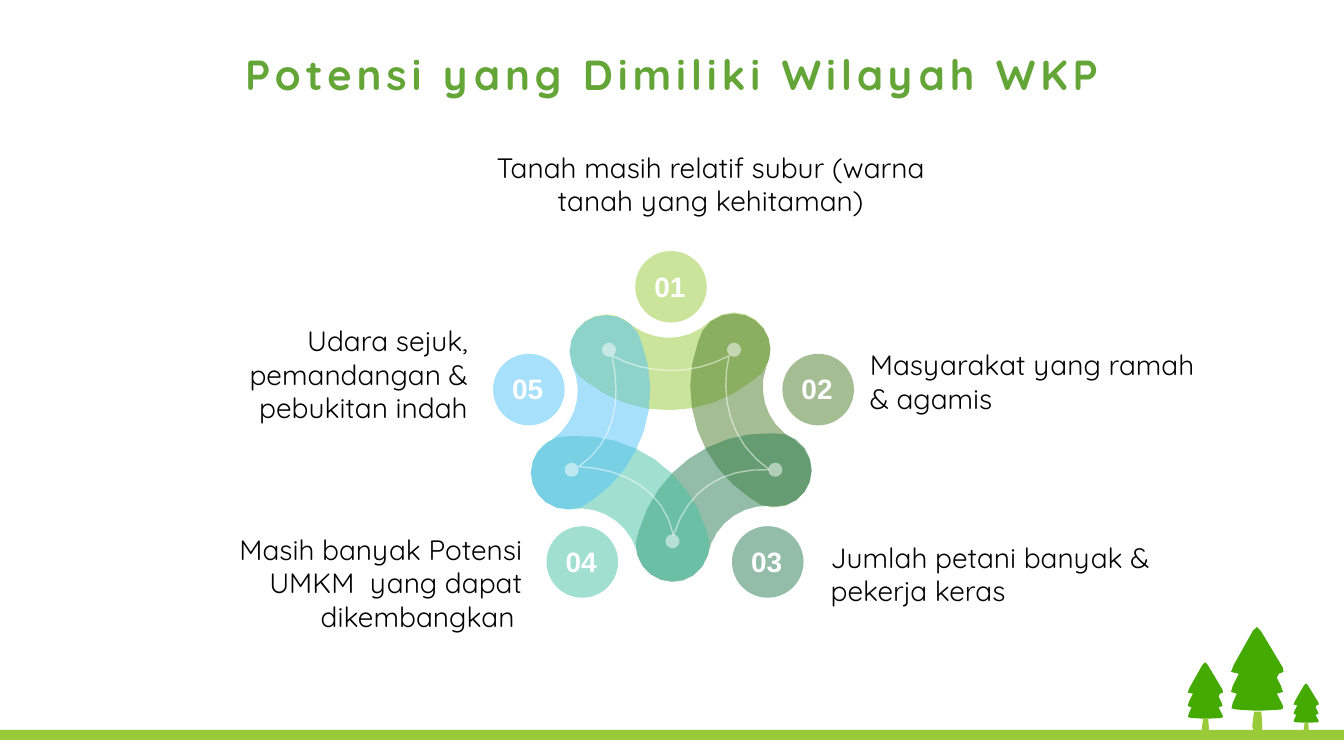
import math

from lxml import etree
from pptx import Presentation
from pptx.dml.color import RGBColor
from pptx.enum.shapes import MSO_SHAPE
from pptx.enum.text import MSO_ANCHOR, MSO_AUTO_SIZE, PP_ALIGN
from pptx.oxml.ns import qn
from pptx.util import Inches, Pt

LEFT, CENTER, RIGHT = PP_ALIGN.LEFT, PP_ALIGN.CENTER, PP_ALIGN.RIGHT
TOP, MIDDLE = MSO_ANCHOR.TOP, MSO_ANCHOR.MIDDLE
GROW, FIXED = MSO_AUTO_SIZE.SHAPE_TO_FIT_TEXT, MSO_AUTO_SIZE.NONE
RECTANGLE, OVAL = MSO_SHAPE.RECTANGLE, MSO_SHAPE.OVAL
DOT = MSO_SHAPE.FLOWCHART_CONNECTOR

COLORS = {
    "title": "63A537", "text": "000000", "white": "FFFFFF",
    "lime": "99CB38", "olive": "4A7C29", "forest": "297D53",
    "teal": "44C1A3", "sky": "51C3F9", "leaf": "44A900",
}
STEPS_PER_INCH, MOST_STEPS = 8, 8
BADGE_SIZE, DOT_SIZE = 0.71, 0.14
LINK_SIZE = (1.99, 0.97)

# Outlines: a start point, then curves (two controls and an end) or line ends
LINK_PATH = [
    (7.28, 3.1), (7.48, 3.1, 7.64, 3.27, 7.64, 3.47),
    (7.64, 3.6, 7.57, 3.72, 7.46, 3.78), (6.99, 4.16, 6.31, 4.17, 5.83, 3.8),
    (5.72, 3.74, 5.65, 3.62, 5.65, 3.49), (5.65, 3.29, 5.81, 3.12, 6.01, 3.12),
    (6.11, 3.12, 6.2, 3.16, 6.27, 3.23), (6.51, 3.41, 6.84, 3.39, 7.05, 3.18),
    (7.12, 3.13, 7.19, 3.1, 7.28, 3.1),
]
STAR_PATH = [
    (6.07, 3.53), (6.43, 3.72, 6.86, 3.73, 7.23, 3.53),
    (7.14, 3.94, 7.23, 4.38, 7.63, 4.66), (7.16, 4.64, 6.82, 4.86, 6.68, 5.31),
    (6.58, 4.85, 6.18, 4.65, 5.74, 4.63), (6.09, 4.39, 6.17, 3.98, 6.07, 3.53),
]
CROWN_PATH = [
    (12.44, 7.06), (12.27, 7.05), (12.21, 7.05, 12.2, 7.04, 12.23, 6.98),
    (12.27, 6.89), (12.2, 6.88, 12.2, 6.88, 12.23, 6.81), (12.29, 6.69),
    (12.2, 6.68, 12.19, 6.68, 12.24, 6.6), (12.43, 6.26),
    (12.47, 6.22), (12.51, 6.26), (12.73, 6.63),
    (12.75, 6.67, 12.74, 6.68, 12.69, 6.69), (12.67, 6.73), (12.71, 6.81),
    (12.75, 6.88, 12.74, 6.88, 12.67, 6.89), (12.73, 7.01),
    (12.74, 7.03, 12.74, 7.04, 12.71, 7.05), (12.52, 7.06),
]
TRUNK_PATH = [
    (12.44, 7.06), (12.52, 7.06), (12.53, 7.21),
    (12.54, 7.25, 12.52, 7.27, 12.48, 7.28), (12.44, 7.28, 12.42, 7.25, 12.42, 7.21),
]

# Content: left, top and what belongs there
LINKS = [(5.65, 3.1, 0, "lime"), (6.38, 3.62, 72.2, "olive"),
         (6.12, 4.46, 144.6, "forest"), (5.22, 4.47, 215.3, "teal"),
         (4.93, 3.64, 288.6, "sky")]
BADGES = [(6.3, 2.49, "lime"), (7.76, 3.51, "olive"), (7.26, 5.22, "forest"),
          (5.42, 5.22, "teal"), (4.89, 3.51, "sky")]
DOTS = [(5.97, 3.4), (7.21, 3.4), (7.62, 4.59), (6.6, 5.3), (5.6, 4.59)]
LABELS = [
    ((4.61, 1.44, 4.9, 0.77), CENTER,
     ["Tanah masih relatif subur (warna tanah yang kehitaman)"]),
    ((8.53, 3.4, 4.47, 0.77), LEFT, ["Masyarakat yang ramah", "& agamis"]),
    ((8.14, 5.31, 3.85, 0.77), LEFT, ["Jumlah petani banyak & pekerja keras"]),
    ((1.66, 5.23, 3.64, 1.11), RIGHT,
     ["Masih banyak Potensi UMKM  yang dapat dikembangkan "]),
    ((1.12, 3.16, 3.64, 1.11), RIGHT,
     ["Udara sejuk, pemandangan & pebukitan indah"]),
]
TREES = [  # crown box, trunk box
    ((12.21, 6.22, 0.52, 0.83), (12.42, 7.06, 0.1, 0.21)),
    ((12.83, 6.78, 0.25, 0.39), (12.93, 7.17, 0.05, 0.1)),
    ((11.78, 6.57, 0.35, 0.56), (11.92, 7.13, 0.07, 0.14)),
]


def rgb(name):
    return RGBColor.from_string(COLORS[name])


def set_all(target, values):
    for name, value in values.items():
        setattr(target, name, value)


def paint(shape, fill=None, line=None, opacity=100):
    shape.shadow.inherit = False
    if fill:
        shape.fill.solid()
        shape.fill.fore_color.rgb = rgb(fill)
    else:
        shape.fill.background()
    if line:
        shape.line.color.rgb = rgb(line)
        shape.line.width = Pt(1)
    else:
        shape.line.fill.background()
    if opacity < 100:
        for color in list(shape._element.spPr.iter(qn("a:srgbClr"))):
            etree.SubElement(color, qn("a:alpha")).set("val", str(opacity * 1000))


def add_preset(holder, kind, at, fill, opacity=100):
    shape = holder.shapes.add_shape(kind, *map(Inches, at))
    paint(shape, fill, opacity=opacity)


def trace(outline):
    """Return points along an outline, more of them on longer curves."""
    points = [outline[0]]
    for step in outline[1:]:
        if len(step) == 2:
            points.append(step)
            continue
        corners = [points[-1], step[:2], step[2:4], step[4:]]
        chord = math.dist(corners[0], corners[3])
        count = min(MOST_STEPS, max(2, math.ceil(chord * STEPS_PER_INCH)))
        for index in range(1, count + 1):
            t = index / count
            weights = ((1 - t) ** 3, 3 * t * (1 - t) ** 2, 3 * t * t * (1 - t), t ** 3)
            points.append(tuple(sum(w * c[axis] for w, c in zip(weights, corners))
                                for axis in (0, 1)))
    return [(Inches(x), Inches(y)) for x, y in points]


def add_outline(page, outline, at, rotation=0, **look):
    points = trace(outline)
    builder = page.shapes.build_freeform(*points[0])
    builder.add_line_segments(points[1:], close=True)
    shape = builder.convert_to_shape()
    set_all(shape, dict(zip(("left", "top", "width", "height"), map(Inches, at))))
    shape.rotation = rotation
    paint(shape, **look)


def add_text(holder, at, lines, align=CENTER, font="Quicksand", size=20,
             color="text", bold=False, frame=None, para_format=None, spacing=None):
    box = holder.shapes.add_textbox(*map(Inches, at))
    set_all(box.text_frame, {
        "word_wrap": True, "auto_size": GROW, "vertical_anchor": TOP,
        "margin_left": Inches(0.1), "margin_right": Inches(0.12),
        "margin_top": Inches(0.05), "margin_bottom": Inches(0.05), **(frame or {})})
    for index, line in enumerate(lines):
        para = box.text_frame.add_paragraph() if index else box.text_frame.paragraphs[0]
        set_all(para, {"alignment": align, **(para_format or {})})
        span = para.add_run()
        span.text = line
        set_all(span.font, {"name": font, "size": Pt(size), "bold": bold})
        span.font.color.rgb = rgb(color)
        if spacing:
            span.font._element.set("spc", str(int(spacing * 100)))


def add_badge(page, number, left, top, color):
    badge = page.shapes.add_group_shape()
    add_preset(badge, OVAL, (left, top, BADGE_SIZE, BADGE_SIZE), color, 50)
    add_text(badge, (left + 0.02, top + 0.13, 0.67, 0.44), [f"{number:02d}"],
             font="Arial", color="white", bold=True)


def main():
    deck = Presentation()
    deck.slide_width, deck.slide_height = Inches(13.33), Inches(7.5)
    page = deck.slides.add_slide(deck.slide_layouts[6])

    # Ground strip and title
    add_preset(page, RECTANGLE, (0, 7.24, 13.33, 0.1), "lime")
    add_text(page, (0.34, 0.37, 12.66, 0.79), ["Potensi yang Dimiliki Wilayah WKP"],
             size=30, color="title", bold=True, spacing=3.5,
             frame={"auto_size": FIXED, "vertical_anchor": MIDDLE,
                    "margin_right": Inches(0.1)},
             para_format={"line_spacing": 0.9, "space_before": Pt(10)})

    # Ring of five links with numbered badges
    for left, top, rotation, color in LINKS:
        add_outline(page, LINK_PATH, (left, top, *LINK_SIZE), rotation,
                    fill=color, opacity=50)
    for number, badge in enumerate(BADGES, 1):
        add_badge(page, number, *badge)

    # Joints and the thin star between them
    for left, top in DOTS:
        add_preset(page, DOT, (left, top, DOT_SIZE, DOT_SIZE), "white", 50)
    add_outline(page, STAR_PATH, (5.74, 3.53, 1.89, 1.78), line="white", opacity=50)

    # Labels
    for at, align, lines in LABELS:
        add_text(page, at, lines, align)

    # Trees
    for crown, trunk in TREES:
        add_outline(page, CROWN_PATH, crown, fill="leaf")
        add_outline(page, TRUNK_PATH, trunk, fill="lime")

    deck.save("out.pptx")


if __name__ == "__main__":
    main()
